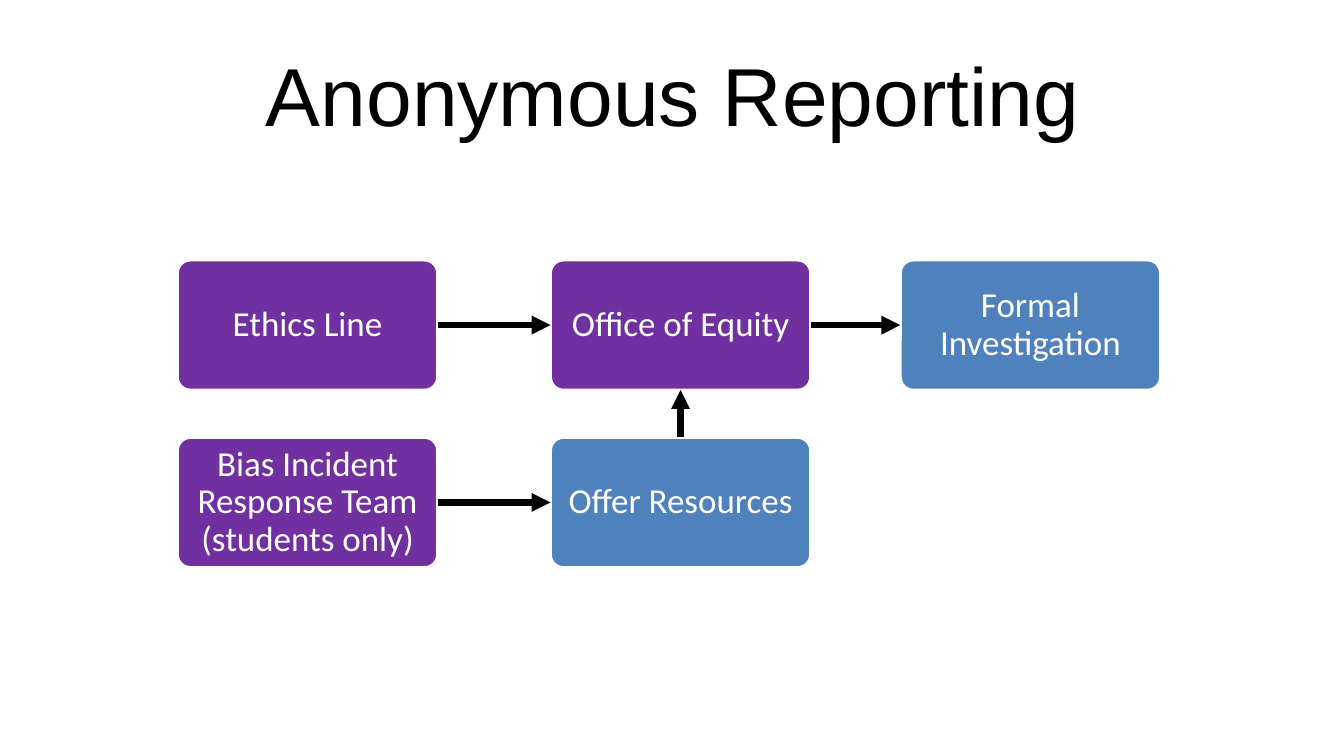
from lxml import etree
from pptx import Presentation
from pptx import util as u
from pptx.dml.color import RGBColor
from pptx.enum import shapes, text
from pptx.oxml.ns import qn

PX = 9144  # EMU, 100 px to the inch

WHITE = RGBColor(0xFF, 0xFF, 0xFF)
BLACK = RGBColor(0x00, 0x00, 0x00)
PURPLE = RGBColor(0x70, 0x30, 0xA0)
BLUE = RGBColor(0x4F, 0x81, 0xBD)

STEP_WIDTH, STEP_HEIGHT = 258, 129
COLUMNS = (176, 546, 893)
ROWS = (258, 434)
TOP, LEFT, BOTTOM, RIGHT = range(4)

# name: (wording, column, row, colour)
STEPS = {
    "report": ("Ethics Line", 0, 0, PURPLE),
    "equity": ("Office of Equity", 1, 0, PURPLE),
    "investigation": ("Formal Investigation", 2, 0, BLUE),
    "bias team": ("Bias Incident Response Team (students only)", 0, 1, PURPLE),
    "resources": ("Offer Resources", 1, 1, BLUE),
}
ARROWS = (
    ("report", RIGHT, "equity", LEFT),
    ("equity", RIGHT, "investigation", LEFT),
    ("bias team", RIGHT, "resources", LEFT),
    ("resources", TOP, "equity", BOTTOM),
)


def px(*lengths):
    return [u.Emu(length * PX) for length in lengths]


def write(shape, wording, font, size, colour, inset):
    """Centre one paragraph in the shape, both ways."""
    frame = shape.text_frame
    frame.word_wrap = True
    frame.vertical_anchor = text.MSO_ANCHOR.MIDDLE
    frame.margin_left = frame.margin_right = u.Emu(inset * PX)
    frame.margin_top = frame.margin_bottom = u.Emu(inset * PX)
    para = frame.paragraphs[0]
    para.alignment = text.PP_ALIGN.CENTER
    span = para.add_run()
    span.text = wording
    span.font.name = font
    span.font.size = u.Pt(size)
    span.font.color.rgb = colour
    return para


def add_title(page, wording):
    box = page.shapes.add_textbox(*px(67, 30, 1200, 125))
    write(box, wording, "Arial", 58.7, BLACK, 5)


def add_step(page, wording, column, row, colour):
    box = page.shapes.add_shape(
        shapes.MSO_SHAPE.ROUNDED_RECTANGLE,
        *px(COLUMNS[column], ROWS[row], STEP_WIDTH, STEP_HEIGHT))
    box.adjustments[0] = 0.1
    box.shadow.inherit = False
    box.fill.solid()
    box.fill.fore_color.rgb = colour
    box.line.color.rgb = WHITE
    box.line.width = u.Pt(2)
    para = write(box, wording, "Calibri", 25, WHITE, 5)
    para.line_spacing = 0.9
    return box


def add_arrow(page, start, start_side, end, end_side):
    arrow = page.shapes.add_connector(shapes.MSO_CONNECTOR.STRAIGHT, 0, 0, 0, 0)
    arrow.begin_connect(start, start_side)
    arrow.end_connect(end, end_side)
    arrow.line.color.rgb = BLACK
    arrow.line.width = u.Pt(4.5)
    etree.SubElement(arrow.line._get_or_add_ln(), qn("a:tailEnd"), type="triangle")
    etree.SubElement(arrow._element.spPr, qn("a:effectLst"))


def main():
    deck = Presentation()
    deck.slide_width, deck.slide_height = px(1333, 750)
    page = deck.slides.add_slide(deck.slide_layouts[6])
    add_title(page, "Anonymous Reporting")
    boxes = {name: add_step(page, *step) for name, step in STEPS.items()}
    for start, start_side, end, end_side in ARROWS:
        add_arrow(page, boxes[start], start_side, boxes[end], end_side)
    deck.save("out.pptx")


if __name__ == "__main__":
    main()
